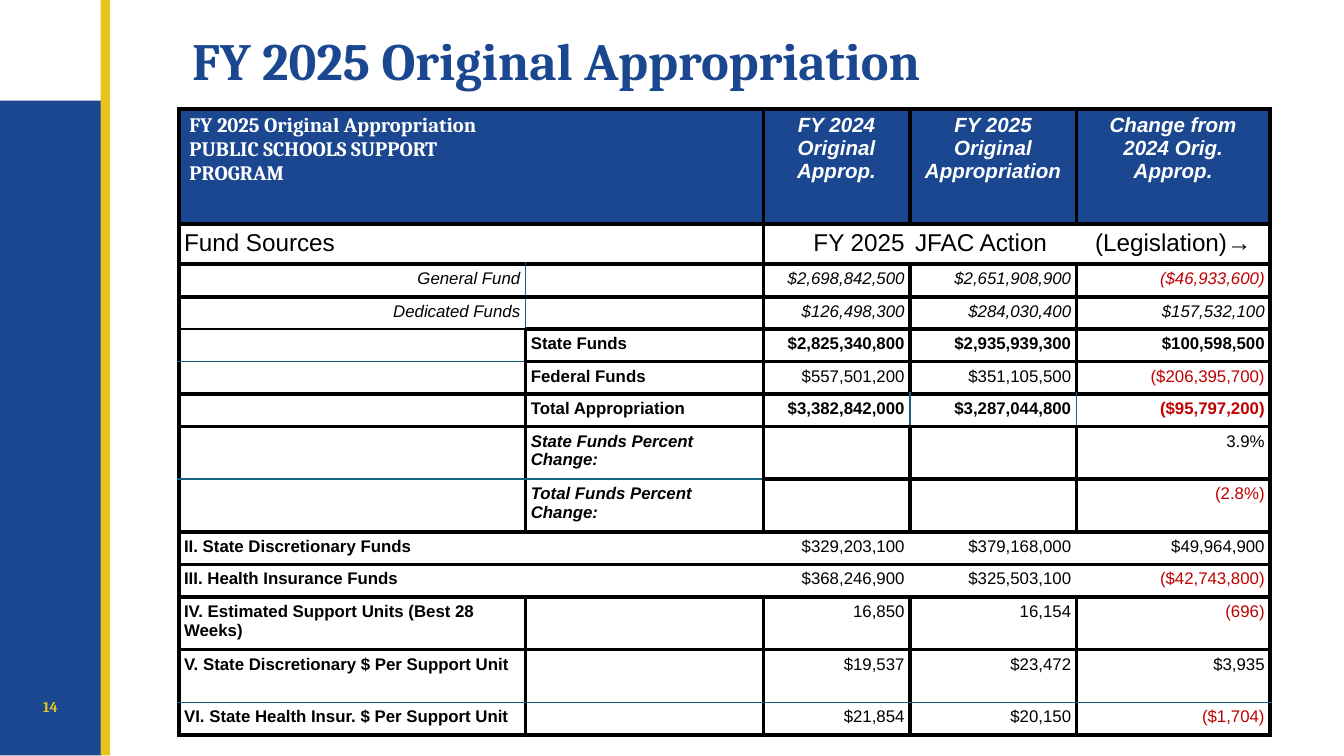
from dataclasses import dataclass

from lxml.etree import SubElement
from pptx import Presentation
from pptx.dml.color import RGBColor
from pptx.enum.shapes import MSO_SHAPE
from pptx.enum.text import MSO_ANCHOR, MSO_AUTO_SIZE, PP_ALIGN
from pptx.oxml.ns import qn
from pptx.util import Inches, Pt

BLUE, GOLD, WHITE, BLACK, RED, TEAL = (
    "1A478F", "E7C221", "FFFFFF", "000000", "C00000", "156082")
LINES = {"H": (BLACK, 2.25), "B": (BLACK, 1), "T": (TEAL, 1), "-": None}
COLUMN_WIDTHS = (2.58, 1.77, 1.09, 1.24, 1.44)
TABLE_HEIGHT = 4.66
LEFT, CENTER, RIGHT = PP_ALIGN.LEFT, PP_ALIGN.CENTER, PP_ALIGN.RIGHT
AMOUNTS = (LEFT, LEFT, RIGHT, RIGHT, RIGHT)
INDENTED = (RIGHT, LEFT, RIGHT, RIGHT, RIGHT)


@dataclass
class Band:
    texts: tuple[str, ...]
    height: float = 0.24
    aligns: tuple = AMOUNTS
    bold: str = "10000"
    italic: str = "00000"
    size: float = 9
    between: str = "HHHH"
    below: str = "HHHHH"
    fill: str = WHITE
    color: str = BLACK
    margin: float = 0.04
    label_font: str = "Arial"


BANDS = (
    Band(("FY 2025 Original Appropriation\nPUBLIC SCHOOLS SUPPORT PROGRAM", "",
          "FY 2024 Original Approp.", "FY 2025 Original Appropriation",
          "Change from 2024 Orig. Approp."), 0.85,
         (LEFT, LEFT, CENTER, CENTER, CENTER), "11111", "00111", 11, "-HHH",
         fill=BLUE, color=WHITE, margin=0.08, label_font="Cambria"),
    Band(("Fund Sources", "", "FY 2025", "JFAC Action", "(Legislation)→"), 0.3,
         (LEFT, LEFT, RIGHT, LEFT, CENTER), "00000", size=13, between="-H--"),
    Band(("General Fund", "", "$2,698,842,500", "$2,651,908,900", "($46,933,600)"),
         aligns=INDENTED, bold="00000", italic="11111", between="THHH"),
    Band(("Dedicated Funds", "", "$126,498,300", "$284,030,400", "$157,532,100"),
         aligns=INDENTED, bold="00000", italic="11111", between="THHH", below="BHHHH"),
    Band(("", "State Funds", "$2,825,340,800", "$2,935,939,300", "$100,598,500"),
         bold="11111", below="THHHH"),
    Band(("", "Federal Funds", "$557,501,200", "$351,105,500", "($206,395,700)"),
         bold="01000"),
    Band(("", "Total Appropriation", "$3,382,842,000", "$3,287,044,800",
          "($95,797,200)"), bold="11111", between="HHTT"),
    Band(("", "State Funds Percent Change:", "", "", "3.9%"), 0.39,
         bold="01000", italic="01000", below="TTHHH"),
    Band(("", "Total Funds Percent Change:", "", "", "(2.8%)"), 0.39,
         bold="01000", italic="01000"),
    Band(("II. State Discretionary Funds", "", "$329,203,100", "$379,168,000",
          "$49,964,900"), between="----"),
    Band(("III. Health Insurance Funds", "", "$368,246,900", "$325,503,100",
          "($42,743,800)"), between="----"),
    Band(("IV. Estimated Support Units (Best 28 Weeks)", "", "16,850", "16,154",
          "(696)"), 0.39),
    Band(("V. State Discretionary $ Per Support Unit", "", "$19,537", "$23,472",
          "$3,935"), 0.39, below="TTTTT"),
    Band(("VI. State Health Insur. $ Per Support Unit", "", "$21,854", "$20,150",
          "($1,704)")),
)


def rgb(value: str) -> RGBColor:
    return RGBColor.from_string(value)


def style_font(font, name: str, size: float, color: str, bold=True, italic=False) -> None:
    font.name = name
    font.size = Pt(size)
    font.color.rgb = rgb(color)
    font.bold = bold
    font.italic = italic


def add_panel(page, left: float, top: float, width: float, height: float, color: str) -> None:
    panel = page.shapes.add_shape(
        MSO_SHAPE.RECTANGLE, Inches(left), Inches(top), Inches(width), Inches(height))
    panel.shadow.inherit = False
    panel.fill.solid()
    panel.fill.fore_color.rgb = rgb(color)
    panel.line.fill.background()


def write_text(box, text: str, size: float, color: str, align, anchor) -> None:
    frame = box.text_frame
    frame.text = text
    frame.word_wrap = True
    frame.auto_size = MSO_AUTO_SIZE.NONE
    frame.vertical_anchor = anchor
    frame.margin_left = frame.margin_right = Inches(0.1)
    frame.margin_top = frame.margin_bottom = Inches(0.1)
    para = frame.paragraphs[0]
    para.alignment = align
    style_font(para.runs[0].font, "Cambria", size, color)


def set_border(cell, side: str, code: str) -> None:
    properties = cell._tc.get_or_add_tcPr()
    line = SubElement(properties, qn(f"a:ln{side}"))
    if LINES[code] is None:
        line.set("w", "0")
        SubElement(line, qn("a:noFill"))
        return
    color, width = LINES[code]
    line.set("w", str(int(Pt(width))))
    SubElement(SubElement(line, qn("a:solidFill")), qn("a:srgbClr")).set("val", color)


def fill_cell(cell, band: Band, above: str, column: int) -> None:
    verticals = "H" + band.between + "H"
    edges = (verticals[column], verticals[column + 1], above[column], band.below[column])
    for side, code in zip("LRTB", edges):
        set_border(cell, side, code)
    cell.fill.solid()
    cell.fill.fore_color.rgb = rgb(band.fill)
    cell.margin_left = cell.margin_right = Inches(band.margin)
    cell.margin_top = cell.margin_bottom = Inches(0.04)
    text = band.texts[column]
    cell.text_frame.text = text
    negative = text.startswith("(") and column == 4 and band.size == 9
    for para in cell.text_frame.paragraphs:
        para.alignment = band.aligns[column]
        for span in para.runs:
            style_font(span.font, band.label_font if column == 0 else "Arial", band.size,
                       RED if negative else band.color,
                       band.bold[column] == "1", band.italic[column] == "1")
        if not text:
            para._p.get_or_add_endParaRPr().set("sz", str(int(band.size * 100)))


def add_fund_table(page) -> None:
    frame = page.shapes.add_table(
        len(BANDS), len(COLUMN_WIDTHS), Inches(1.33), Inches(0.81),
        Inches(sum(COLUMN_WIDTHS)), Inches(TABLE_HEIGHT))
    table = frame.table
    table.first_row = table.horz_banding = False
    for column, width in zip(table.columns, COLUMN_WIDTHS):
        column.width = Inches(width)
    stretch = TABLE_HEIGHT / sum(band.height for band in BANDS)
    above = "HHHHH"
    for row, band in enumerate(BANDS):
        table.rows[row].height = Inches(band.height * stretch)
        for column in range(len(COLUMN_WIDTHS)):
            fill_cell(table.cell(row, column), band, above, column)
        above = band.below


def main() -> None:
    deck = Presentation()
    deck.slide_width = Inches(10)
    deck.slide_height = Inches(10 * 9 / 16)
    page = deck.slides.add_slide(deck.slide_layouts[5])
    add_panel(page, 0, 0.74, 0.76, 4.88, BLUE)
    add_panel(page, 0, 0, 0.76, 0.75, WHITE)
    add_panel(page, 0.75, 0, 0.07, 5.62, GOLD)
    number = page.shapes.add_textbox(Inches(0.13), Inches(5.04), Inches(0.49), Inches(0.43))
    write_text(number, "14", 8, GOLD, CENTER, MSO_ANCHOR.MIDDLE)
    add_fund_table(page)
    title = page.shapes.title
    title.left, title.top = Inches(1.33), Inches(0.16)
    title.width, title.height = Inches(7.29), Inches(0.65)
    write_text(title, "FY 2025 Original Appropriation", 28, BLUE, LEFT, MSO_ANCHOR.TOP)
    title.text_frame.paragraphs[0].line_spacing = 0.9
    deck.save("out.pptx")


if __name__ == "__main__":
    main()
